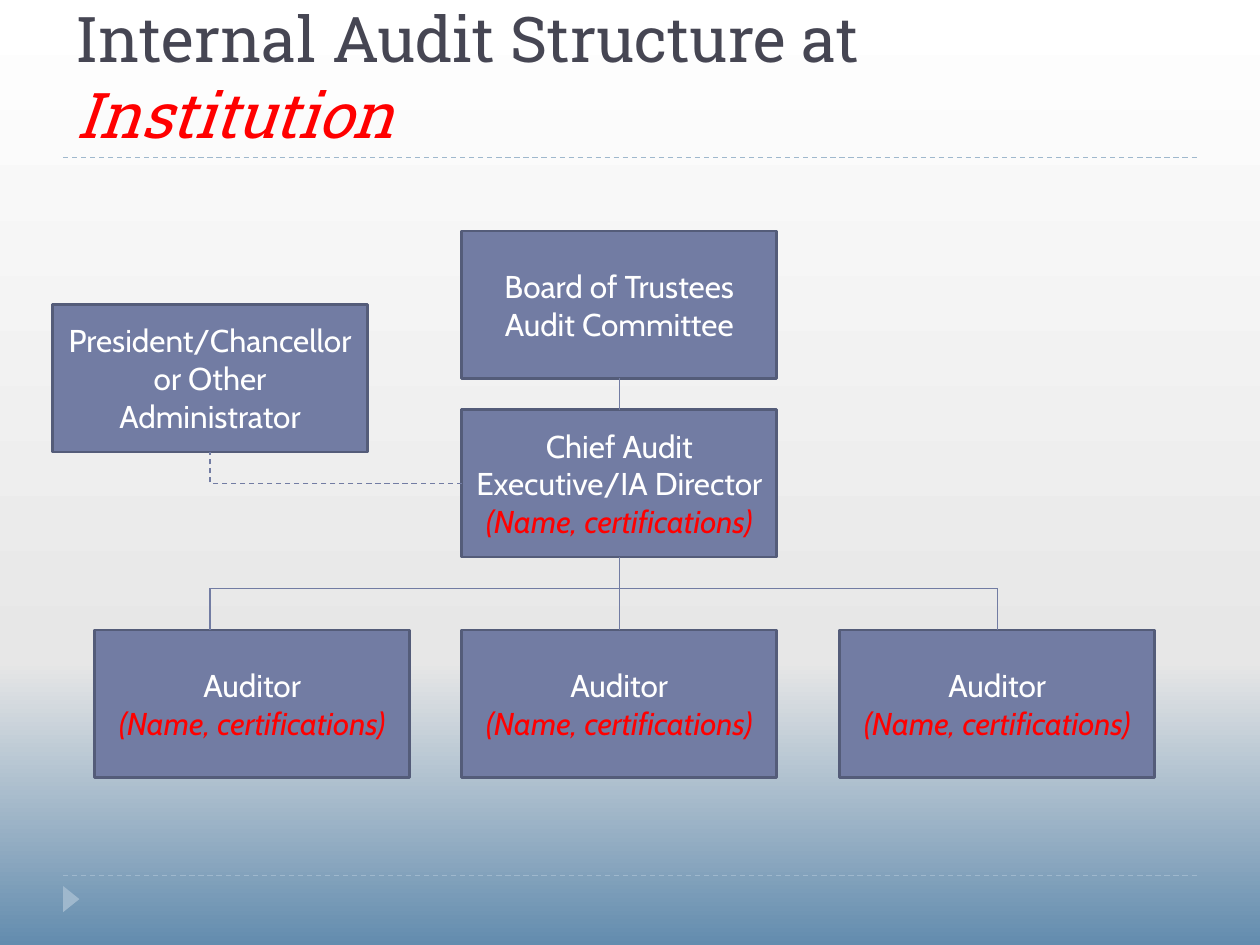
from collections import namedtuple
from copy import deepcopy

from pptx import Presentation
from pptx.dml.color import RGBColor
from pptx.enum.dml import MSO_LINE
from pptx.enum.shapes import MSO_CONNECTOR, MSO_SHAPE
from pptx.enum.text import MSO_ANCHOR, PP_ALIGN
from pptx.oxml.ns import qn
from pptx.util import Cm, Pt

STRAIGHT, ELBOW = MSO_CONNECTOR.STRAIGHT, MSO_CONNECTOR.ELBOW
RECTANGLE, TRIANGLE = MSO_SHAPE.RECTANGLE, MSO_SHAPE.ISOSCELES_TRIANGLE
DASH = MSO_LINE.DASH
MIDDLE, BOTTOM_ANCHOR = MSO_ANCHOR.MIDDLE, MSO_ANCHOR.BOTTOM
CENTER = PP_ALIGN.CENTER
TOP, LEFT, BOTTOM = 0, 1, 2

WHITE = RGBColor(0xFF, 0xFF, 0xFF)
RED = RGBColor(0xFF, 0x00, 0x00)
INK = RGBColor(0x46, 0x46, 0x53)
SLATE = RGBColor(0x72, 0x7C, 0xA3)
DARK_SLATE = RGBColor(0x54, 0x5C, 0x79)
PALE_BLUE = RGBColor(0x9F, 0xB8, 0xCD)
DEEP_BLUE = RGBColor(0x63, 0x8C, 0xAE)
LIGHT_GREY = RGBColor(0xE7, 0xE7, 0xE7)

TITLE_FONT, BODY_FONT = "Roboto Slab", "Cabin"
CARD_WIDTH, CARD_HEIGHT = Cm(6.35), Cm(2.97)
BUS_GAP = Cm(0.63)
NAME_LINE = "(Name, certifications)"

Box = namedtuple("Box", "left top width height")


def style_span(span, font, size, color, italic=False):
    span.font.name = font
    span.font.size = Pt(size)
    span.font.color.rgb = color
    span.font.italic = italic


def paint_background(page):
    fill = page.background.fill
    fill.gradient()
    fill.gradient_angle = 90
    first = fill.gradient_stops[0]._gs
    first.addnext(deepcopy(first))
    stops = [(0, DEEP_BLUE), (0.3, LIGHT_GREY), (1, WHITE)]
    for stop, (position, color) in zip(fill.gradient_stops, stops):
        stop.color.rgb = color
        stop.position = position


def add_line(page, start, end, color=SLATE, kind=STRAIGHT, dashed=False):
    line = page.shapes.add_connector(kind, *start, *end)
    line.line.color.rgb = color
    line.line.width = Pt(0.75)
    if dashed:
        line.line.dash_style = DASH
    properties = line._element.spPr
    properties.append(properties.makeelement(qn("a:effectLst"), {}))
    return line


def middle_of(card):
    return card.left + card.width // 2


def add_title(page, box):
    title = page.shapes.add_textbox(*box)
    frame = title.text_frame
    frame.word_wrap = True
    frame.vertical_anchor = BOTTOM_ANCHOR
    para = frame.paragraphs[0]
    para.text = "Internal Audit Structure at "
    style_span(para.runs[0], TITLE_FONT, 36, INK)
    span = para.add_run()
    span.text = "Institution"
    style_span(span, TITLE_FONT, 36, RED, italic=True)
    add_rule(page, box.left, box.top + box.height, box.width)


def add_rule(page, left, top, width):
    add_line(page, (left, top), (left + width, top), PALE_BLUE, dashed=True)


def add_footer(page, box):
    add_rule(page, box.left, box.top, box.width)
    marker = page.shapes.add_shape(
        TRIANGLE, box.left - Cm(0.1), box.top + Cm(0.31), Cm(0.53), Cm(0.33))
    marker.rotation = 90
    marker.shadow.inherit = False
    marker.fill.solid()
    marker.fill.fore_color.rgb = PALE_BLUE
    marker.line.fill.background()


def add_card(page, left, top, text):
    card = page.shapes.add_shape(RECTANGLE, left, top, CARD_WIDTH, CARD_HEIGHT)
    card.shadow.inherit = False
    card.fill.solid()
    card.fill.fore_color.rgb = SLATE
    card.line.color.rgb = DARK_SLATE
    card.line.width = Pt(1.5)
    frame = card.text_frame
    frame.word_wrap = True
    frame.vertical_anchor = MIDDLE
    frame.text = text
    for para in frame.paragraphs:
        para.alignment = CENTER
        named = para.text == NAME_LINE
        style_span(para.runs[0], BODY_FONT, 18, RED if named else WHITE, named)
    return card


def add_chart_of_roles(page, box):
    center_left = box.left + Cm(8.25)
    auditor_top = box.top + box.height - CARD_HEIGHT
    board = add_card(page, center_left, box.top,
                     "Board of Trustees\nAudit Committee")
    chief = add_card(page, center_left, box.top + Cm(3.6),
                     "Chief Audit Executive/IA Director\n" + NAME_LINE)
    president = add_card(page, box.left, box.top + Cm(1.48),
                         "President/Chancellor or Other Administrator")
    auditors = [add_card(page, left, auditor_top, "Auditor\n" + NAME_LINE)
                for left in (box.left + Cm(0.85), center_left,
                             box.left + box.width - CARD_WIDTH)]

    center = middle_of(chief)
    link = add_line(page, (center, chief.top), (center, chief.top))
    link.begin_connect(board, BOTTOM)
    link.end_connect(chief, TOP)

    bus_top = chief.top + CARD_HEIGHT + BUS_GAP
    stem = add_line(page, (center, bus_top), (center, bus_top))
    stem.begin_connect(chief, BOTTOM)
    drops = [middle_of(president), center, middle_of(auditors[-1])]
    add_line(page, (drops[0], bus_top), (drops[-1], bus_top))
    for drop, auditor in zip(drops, auditors):
        line = add_line(page, (drop, bus_top), (drop, auditor_top))
        if drop == middle_of(auditor):
            line.end_connect(auditor, TOP)

    advice = add_line(page, (chief.left, chief.top + CARD_HEIGHT // 2),
                      (middle_of(president), president.top + CARD_HEIGHT),
                      kind=ELBOW, dashed=True)
    advice.begin_connect(chief, LEFT)
    advice.end_connect(president, BOTTOM)
    advice._element.spPr.find(qn("a:prstGeom")).set("prst", "bentConnector2")


def main():
    deck = Presentation()
    deck.slide_width, deck.slide_height = Cm(25.4), Cm(19.05)
    page = deck.slides.add_slide(deck.slide_layouts[6])
    paint_background(page)
    add_footer(page, Box(Cm(1.27), Cm(17.65), Cm(22.86), Cm(1)))
    add_title(page, Box(Cm(1.27), Cm(0.43), Cm(22.86), Cm(2.74)))
    add_chart_of_roles(page, Box(Cm(1.06), Cm(4.66), Cm(22.22), Cm(11.01)))
    deck.save("out.pptx")


if __name__ == "__main__":
    main()
